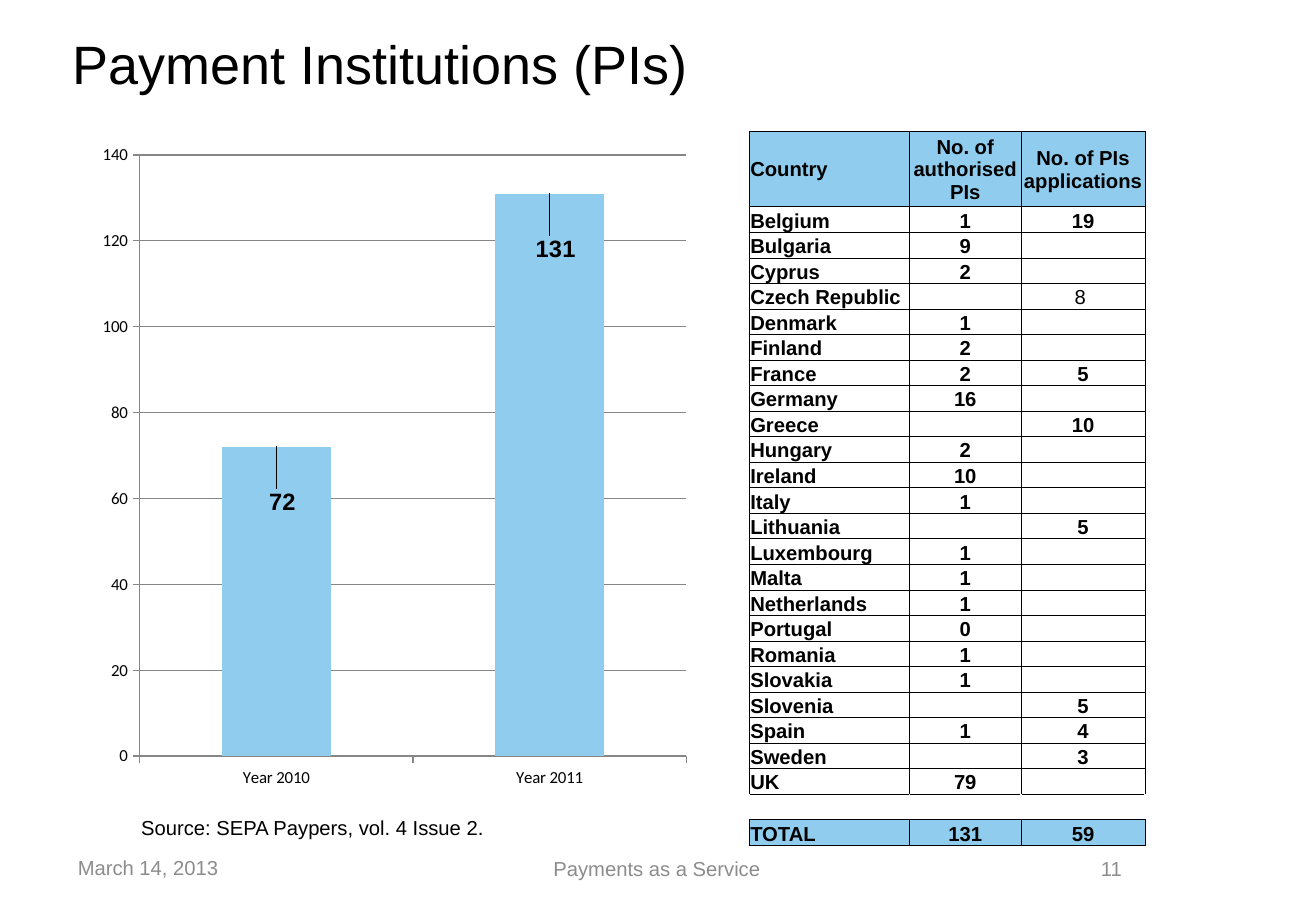
from dataclasses import dataclass

from lxml import etree
from pptx import Presentation
from pptx import util as u
from pptx.chart.data import CategoryChartData
from pptx.dml.color import RGBColor
from pptx.enum import chart as ch, text
from pptx.oxml.ns import qn

COLS, ROWS = 130, 90
CELL = u.Inches(1) / 12
BLACK, GREY, SKY, AXIS = "000000", "8C8C8C", "90CCEE", "868686"
LEFT, CENTER, RIGHT = text.PP_ALIGN.LEFT, text.PP_ALIGN.CENTER, text.PP_ALIGN.RIGHT
TOP, MIDDLE, BOTTOM = text.MSO_ANCHOR.TOP, text.MSO_ANCHOR.MIDDLE, text.MSO_ANCHOR.BOTTOM


@dataclass
class Area:
    col: float
    row: float
    cols: float
    rows: float

    def emu(self) -> list[int]:
        return [grid(n) for n in (self.col, self.row, self.cols, self.rows)]


@dataclass
class Label:
    words: str
    area: Area
    align: text.PP_ALIGN = LEFT
    anchor: text.MSO_ANCHOR = MIDDLE
    size: float = 12
    color: str = GREY


@dataclass
class Country:
    name: str
    authorised: str = ""
    applications: str = ""


LABELS = [
    Label("Payment Institutions (PIs)", Area(6, 2, 103.5, 8.4), size=32, color=BLACK),
    Label("Source: SEPA Paypers, vol. 4 Issue 2.", Area(6, 80, 43, 5), RIGHT, TOP, color=BLACK),
    Label("March 14, 2013", Area(6.5, 83.4, 20.5, 4.6)),
    Label("Payments as a Service", Area(27.8, 83.4, 74.2, 4.8), CENTER),
    Label("11", Area(105, 83.4, 7, 4.8), RIGHT),
]
HEADER = Country("Country", "No. of authorised PIs", "No. of PIs applications")
SPACER = Country("")
TOTAL = Country("TOTAL", "131", "59")
COUNTRIES = [
    Country("Belgium", "1", "19"),
    Country("Bulgaria", "9"),
    Country("Cyprus", "2"),
    Country("Czech Republic", "", "8 "),
    Country("Denmark", "1"),
    Country("Finland", "2"),
    Country("France", "2", "5"),
    Country("Germany", "16"),
    Country("Greece", "", "10"),
    Country("Hungary", "2"),
    Country("Ireland", "10"),
    Country("Italy", "1"),
    Country("Lithuania", "", "5"),
    Country("Luxembourg", "1"),
    Country("Malta", "1"),
    Country("Netherlands", "1"),
    Country("Portugal", "0"),
    Country("Romania", "1"),
    Country("Slovakia", "1"),
    Country("Slovenia", "", "5"),
    Country("Spain", "1", "4"),
    Country("Sweden", "", "3"),
    Country("UK", "79"),
]
TABLE_AREA = Area(74, 13, 39.1, 70.1)
TABLE_COLS = (15.84, 11.04, 12.24)
HEADER_ROWS, SPACER_ROWS = 7.44, 2.4
CHART_AREA = Area(9, 13, 60, 66)


def grid(n: float) -> int:
    return round(n * CELL)


def rgb(color: str) -> RGBColor:
    return RGBColor.from_string(color)


def style(font, size: float, color: str = BLACK, bold: bool = False, name: str = "Arial") -> None:
    font.name, font.size, font.bold = name, u.Pt(size), bold
    font.color.rgb = rgb(color)


def add_label(s, label: Label) -> None:
    tf = s.shapes.add_textbox(*label.area.emu()).text_frame
    tf.word_wrap, tf.vertical_anchor = True, label.anchor
    p = tf.paragraphs[0]
    p.alignment = label.align
    r = p.add_run()
    r.text = label.words
    style(r.font, label.size, label.color)


def add_borders(cell, sides: str) -> None:
    tc_pr = cell._tc.get_or_add_tcPr()
    for side in sides:
        ln = etree.SubElement(tc_pr, qn(f"a:ln{side}"), w=str(u.Pt(0.5)))
        fill = etree.SubElement(ln, qn("a:solidFill"))
        etree.SubElement(fill, qn("a:srgbClr"), val=BLACK)


def fill_cell(cell, words: str, first: bool, country: Country) -> None:
    cell.margin_left = cell.margin_right = cell.margin_top = u.Inches(0.01)
    cell.margin_bottom = 0
    cell.vertical_anchor = MIDDLE if country is HEADER else BOTTOM
    add_borders(cell, "TB" if country is SPACER else "LRTB")
    if country in (HEADER, TOTAL):
        cell.fill.solid()
        cell.fill.fore_color.rgb = rgb(SKY)
    else:
        cell.fill.background()
    p = cell.text_frame.paragraphs[0]
    p.alignment = LEFT if first else CENTER
    if words:
        r = p.add_run()
        r.text = words
        style(r.font, 12, bold=words.strip() != "8")
    else:
        etree.SubElement(p._p, qn("a:endParaRPr"), sz="1200")


def add_country_table(s) -> None:
    lines = [HEADER, *COUNTRIES, SPACER, TOTAL]
    tb = s.shapes.add_table(len(lines), len(TABLE_COLS), *TABLE_AREA.emu()).table
    tb.first_row = tb.horz_banding = False
    for column, width in zip(tb.columns, TABLE_COLS):
        column.width = grid(width)
    plain = (TABLE_AREA.rows - HEADER_ROWS - SPACER_ROWS) / (len(lines) - 2)
    for i, country in enumerate(lines):
        height = HEADER_ROWS if country is HEADER else SPACER_ROWS if country is SPACER else plain
        tb.rows[i].height = grid(height)
        for j, words in enumerate((country.name, country.authorised, country.applications)):
            fill_cell(tb.cell(i, j), words, j == 0, country)


def make_layout(**values: object):
    layout = etree.Element(qn("c:layout"))
    manual = etree.SubElement(layout, qn("c:manualLayout"))
    for tag, val in values.items():
        etree.SubElement(manual, qn(f"c:{tag}"), val=str(val))
    return layout


def add_year_chart(s) -> None:
    data = CategoryChartData()
    data.categories = ["Year 2010", "Year 2011"]
    data.add_series("Series 1", (72, 131))
    chart = s.shapes.add_chart(ch.XL_CHART_TYPE.COLUMN_CLUSTERED, *CHART_AREA.emu(), data).chart
    chart.has_legend = chart.has_title = False
    style(chart.font, 10, name="Calibri")
    plot = chart.plots[0]
    plot.gap_width, plot.vary_by_categories = 150, False
    value_axis = chart.value_axis
    value_axis.minimum_scale, value_axis.maximum_scale, value_axis.major_unit = 0, 140, 20
    value_axis.has_major_gridlines = True
    for axis in (value_axis, chart.category_axis):
        axis.major_tick_mark = ch.XL_TICK_MARK.OUTSIDE
        axis.format.line.color.rgb = rgb(AXIS)
    value_axis.major_gridlines.format.line.color.rgb = rgb(AXIS)
    series = plot.series[0]
    for i in range(len(series.values)):
        point = series.points[i]
        point.format.fill.solid()
        point.format.fill.fore_color.rgb = rgb(SKY)
        style(point.data_label.font, 14, bold=True)
        point.data_label.position = ch.XL_LABEL_POSITION.OUTSIDE_END
    for idx in series._element.findall(f"{qn('c:dLbls')}/{qn('c:dLbl')}/{qn('c:idx')}"):
        idx.addnext(make_layout(x=0.01, y=0.11))
    area = chart._chartSpace.chart.plotArea
    for old in area.findall(qn("c:layout")):
        area.remove(old)
    area.insert(0, make_layout(layoutTarget="inner", xMode="edge", yMode="edge",
                               x=0.08, y=0.035, w=0.9, h=0.9))


def main() -> None:
    prs = Presentation()
    prs.slide_width, prs.slide_height = grid(COLS), grid(ROWS)
    s = prs.slides.add_slide(prs.slide_layouts[6])
    for label in LABELS:
        add_label(s, label)
    add_country_table(s)
    add_year_chart(s)
    prs.save("out.pptx")


if __name__ == "__main__":
    main()
